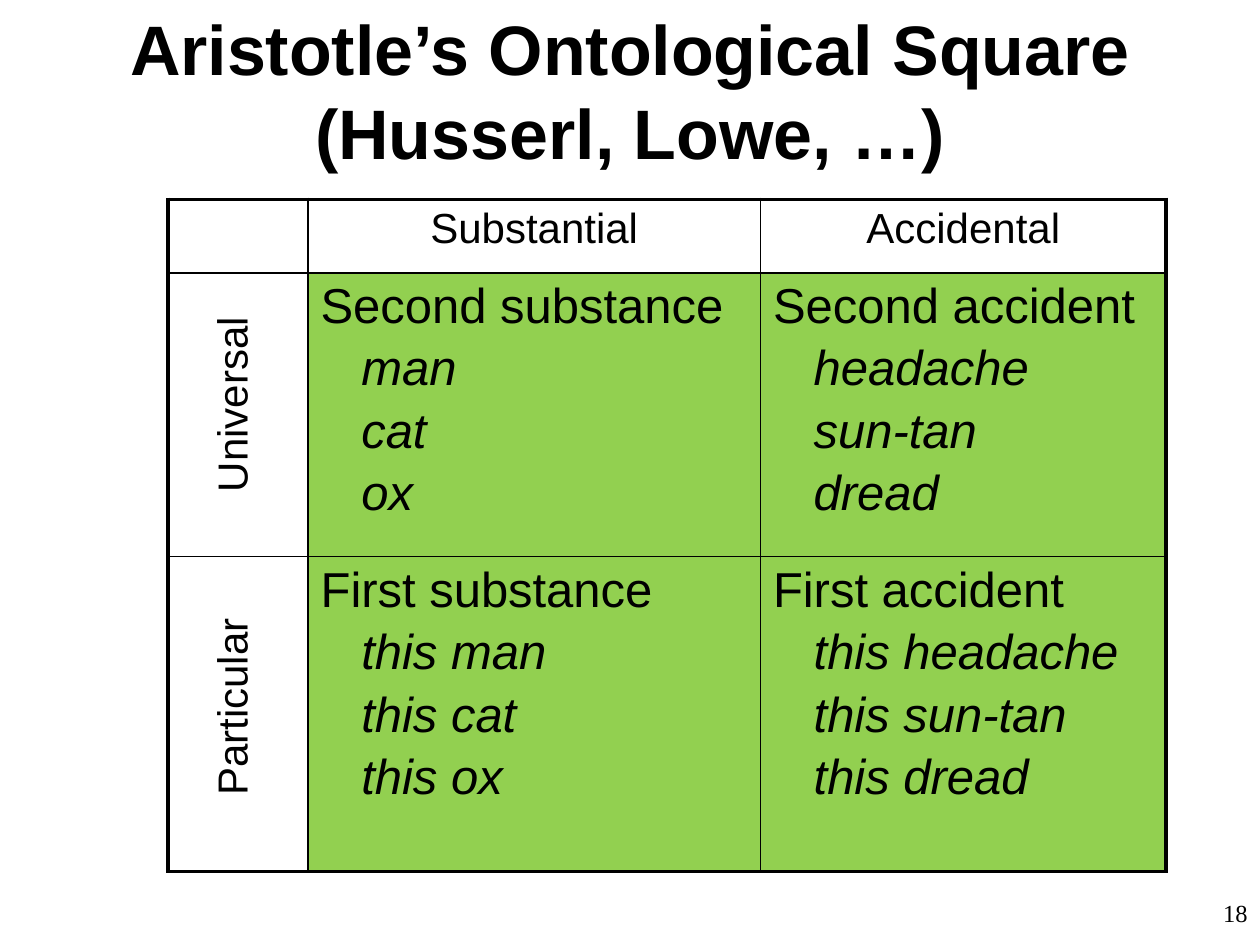
import pptx
import pptx.util
import pptx.dml.color
import pptx.enum.text
import pptx.oxml
import pptx.oxml.ns

Cm = pptx.util.Cm
Pt = pptx.util.Pt
ALIGN = pptx.enum.text.PP_ALIGN
COLORS = {"ink": "000000", "green": "92D050"}


def write(para, text, size, font="Arial", bold=False, slant=False):
    run = para.add_run()
    run.text = text
    run.font.size = Pt(size)
    run.font.name = font
    run.font.bold = bold
    run.font.italic = slant
    run.font.color.rgb = pptx.dml.color.RGBColor.from_string(COLORS["ink"])


def add_box(left, top, width, height):
    box = slide.shapes.add_textbox(Cm(left), Cm(top), Cm(width), Cm(height))
    box.text_frame.word_wrap = True
    return box


deck = pptx.Presentation()
deck.slide_width = Cm(25.4)
deck.slide_height = Cm(19.05)
slide = deck.slides.add_slide(deck.slide_layouts[6])

number = add_box(19.48, 17.98, 5.92, 1.07).text_frame.paragraphs[0]
number.alignment = ALIGN.RIGHT
write(number, "18", 14, "Times New Roman")

title = add_box(1.27, 1.07, 22.86, 1.47).text_frame
title.vertical_anchor = pptx.enum.text.MSO_ANCHOR.MIDDLE
head = title.paragraphs[0]
head.alignment = ALIGN.CENTER
write(head, "Aristotle’s Ontological Square", 40, bold=True)
head.add_line_break()
write(head, "(Husserl, Lowe, …)", 40, bold=True)

widths = [2.82, 9.12, 8.18]
heights = [1.48, 5.72, 6.35]
cells = [
    [[], ["Substantial"], ["Accidental"]],
    [[], ["Second substance", "man", "cat", "ox"],
     ["Second accident", "headache", "sun-tan", "dread"]],
    [[], ["First substance", "this man", "this cat", "this ox"],
     ["First accident", "this headache", "this sun-tan", "this dread"]],
]
frame = slide.shapes.add_table(3, 3, Cm(3.39), Cm(4.02), Cm(sum(widths)), Cm(sum(heights)))
table = frame.table
table.first_row = False
table.horz_banding = False
for col, width in zip(table.columns, widths):
    col.width = Cm(width)
for row, height in zip(table.rows, heights):
    row.height = Cm(height)

for i, line in enumerate(cells):
    for j, texts in enumerate(line):
        cell = table.cell(i, j)
        props = cell._tc.get_or_add_tcPr()
        outer = {"L": j == 0, "R": j == 2, "T": i == 0, "B": i == 2}
        for side, thick in outer.items():
            props.append(pptx.oxml.parse_xml(
                f'<a:ln{side} {pptx.oxml.ns.nsdecls("a")} w="{Pt(2.25 if thick else 1)}">'
                f'<a:solidFill><a:srgbClr val="{COLORS["ink"]}"/></a:solidFill></a:ln{side}>'))
        if i and j:
            cell.fill.solid()
            cell.fill.fore_color.rgb = pptx.dml.color.RGBColor.from_string(COLORS["green"])
        else:
            cell.fill.background()
        for k, text in enumerate(texts):
            para = cell.text_frame.paragraphs[0] if k == 0 else cell.text_frame.add_paragraph()
            para.alignment = ALIGN.LEFT if i else ALIGN.CENTER
            if k:
                para.space_before = Pt(4.5)
                para._p.get_or_add_pPr().set("marL", str(Cm(0.82)))
            write(para, text, 28 if i else 24, slant=k > 0)

for text, top in [("Universal", 7.39), ("Particular", 13.51)]:
    label = add_box(2.51, top, 4.29, 1.27)
    label.rotation = 270
    write(label.text_frame.paragraphs[0], text, 24)

deck.save("out.pptx")
